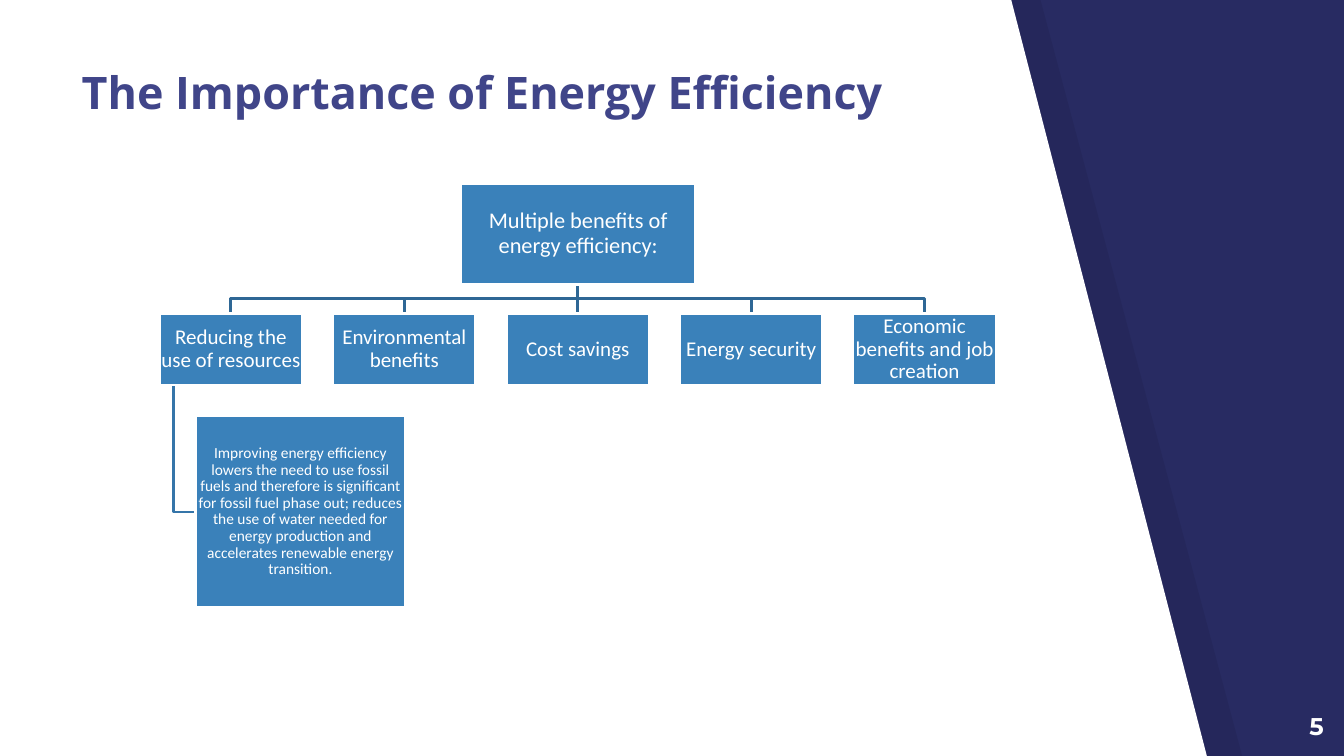
from lxml import etree
from pptx import Presentation
from pptx import util as u
from pptx.dml import color
from pptx.enum import shapes, text
from pptx.oxml import ns

PX = 9144


def rgb(value):
    return color.RGBColor.from_string(value)


class Deck:
    box_fill = "3A81BA"
    white = "FFFFFF"
    title_color = "404589"
    backdrop = "282B62"
    line_width = u.Pt(2)

    def __init__(self, width, height):
        self.prs = Presentation()
        self.prs.slide_width, self.prs.slide_height = width * PX, height * PX
        self.slide = self.prs.slides.add_slide(self.prs.slide_layouts[5])
        self.shapes = self.slide.shapes
        self.slide.background.fill.solid()
        self.slide.background.fill.fore_color.rgb = rgb(self.backdrop)

    def outline(self, points, close):
        builder = self.shapes.build_freeform(*points[0], scale=PX)
        builder.add_line_segments(points[1:], close=close)
        shape = builder.convert_to_shape()
        shape.shadow.inherit = False
        return shape

    def panel(self, points, fill, opacity=100):
        shape = self.outline(points, True)
        shape.fill.solid()
        shape.fill.fore_color.rgb = rgb(fill)
        shape.line.fill.background()
        if opacity < 100:
            tint = shape.element.find(".//" + ns.qn("a:srgbClr"))
            etree.SubElement(tint, ns.qn("a:alpha"), val=str(opacity * 1000))

    def branch(self, points, stroke):
        if len({x for x, y in points}) == 1:
            ends = [n * PX for n in points[0] + points[-1]]
            shape = self.shapes.add_connector(shapes.MSO_CONNECTOR.STRAIGHT, *ends)
            etree.SubElement(shape.element.spPr, ns.qn("a:effectLst"))
        else:
            shape = self.outline(points, False)
            shape.fill.background()
        shape.line.color.rgb = rgb(stroke)
        shape.line.width = self.line_width

    def add_words(self, shape, words, font, size, fill, align, anchor, inset, bold=False):
        frame = shape.text_frame
        frame.word_wrap = True
        frame.auto_size = text.MSO_AUTO_SIZE.NONE
        frame.vertical_anchor = anchor
        frame.margin_left = frame.margin_right = inset * PX
        frame.margin_top = frame.margin_bottom = inset * PX
        paragraph = frame.paragraphs[0]
        paragraph.alignment = align
        run = paragraph.add_run()
        run.text = words
        run.font.name, run.font.size, run.font.bold = font, u.Pt(size), bold
        run.font.color.rgb = rgb(fill)
        return paragraph

    def title(self, words, left, top, width, height):
        holder = self.shapes.title
        holder.left, holder.top = left * PX, top * PX
        holder.width, holder.height = width * PX, height * PX
        self.add_words(holder, words, "Open Sans", 32, self.title_color,
                       text.PP_ALIGN.LEFT, text.MSO_ANCHOR.BOTTOM, 13, True)
        self.shapes.element.append(holder.element)

    def page_number(self, words, left, top, width, height):
        box = self.shapes.add_textbox(left * PX, top * PX, width * PX, height * PX)
        self.add_words(box, words, "Montserrat", 17.3, self.white,
                       text.PP_ALIGN.RIGHT, text.MSO_ANCHOR.TOP, 13, True)

    def box(self, words, size, left, top, width, height):
        shape = self.shapes.add_shape(shapes.MSO_SHAPE.RECTANGLE, left * PX, top * PX,
                                      width * PX, height * PX)
        shape.shadow.inherit = False
        shape.fill.solid()
        shape.fill.fore_color.rgb = rgb(self.box_fill)
        shape.line.color.rgb = rgb(self.white)
        shape.line.width = self.line_width
        paragraph = self.add_words(shape, words, "Calibri", size, self.white,
                                   text.PP_ALIGN.CENTER, text.MSO_ANCHOR.MIDDLE, 1)
        paragraph.line_spacing = 0.9


def main():
    deck = Deck(1333, 750)
    deck.panel([(33, 0), (33, 750), (1232, 750), (1032, 0)], "000000", 7)
    deck.panel([(0, 0), (0, 750), (1197, 750), (1003, 0)], deck.white)
    deck.title("The Importance of Energy Efficiency", 68, 0, 926, 131)
    deck.page_number("5", 1246, 693, 80, 57)

    benefits = ["Reducing the use of resources", "Environmental benefits", "Cost savings",
                "Energy security", "Economic benefits and job creation"]
    first_left, step, width, height = 158, 172, 142, 71
    root_bottom, rail, row_top = 282, 296, 311
    row_bottom = row_top + height
    lefts = [first_left + step * i for i in range(len(benefits))]
    centers = [left + width // 2 for left in lefts]
    root_center = centers[2]

    for center in centers:
        deck.branch([(root_center, root_bottom), (root_center, rail),
                     (center, rail), (center, row_top)], "2E6795")
    deck.branch([(172, row_bottom), (172, 508), (194, 508)], "3575A9")

    deck.box("Multiple benefits of energy efficiency:", 16, 457, 182, 233, 100)
    for benefit, left in zip(benefits, lefts):
        deck.box(benefit, 15, left, row_top, width, height)
    deck.box("Improving energy efficiency lowers the need to use fossil fuels and therefore "
             "is significant for fossil fuel phase out; reduces the use of water needed for "
             "energy production and accelerates renewable energy transition.",
             11, 194, 412, 208, 191)
    deck.prs.save("out.pptx")


if __name__ == "__main__":
    main()
